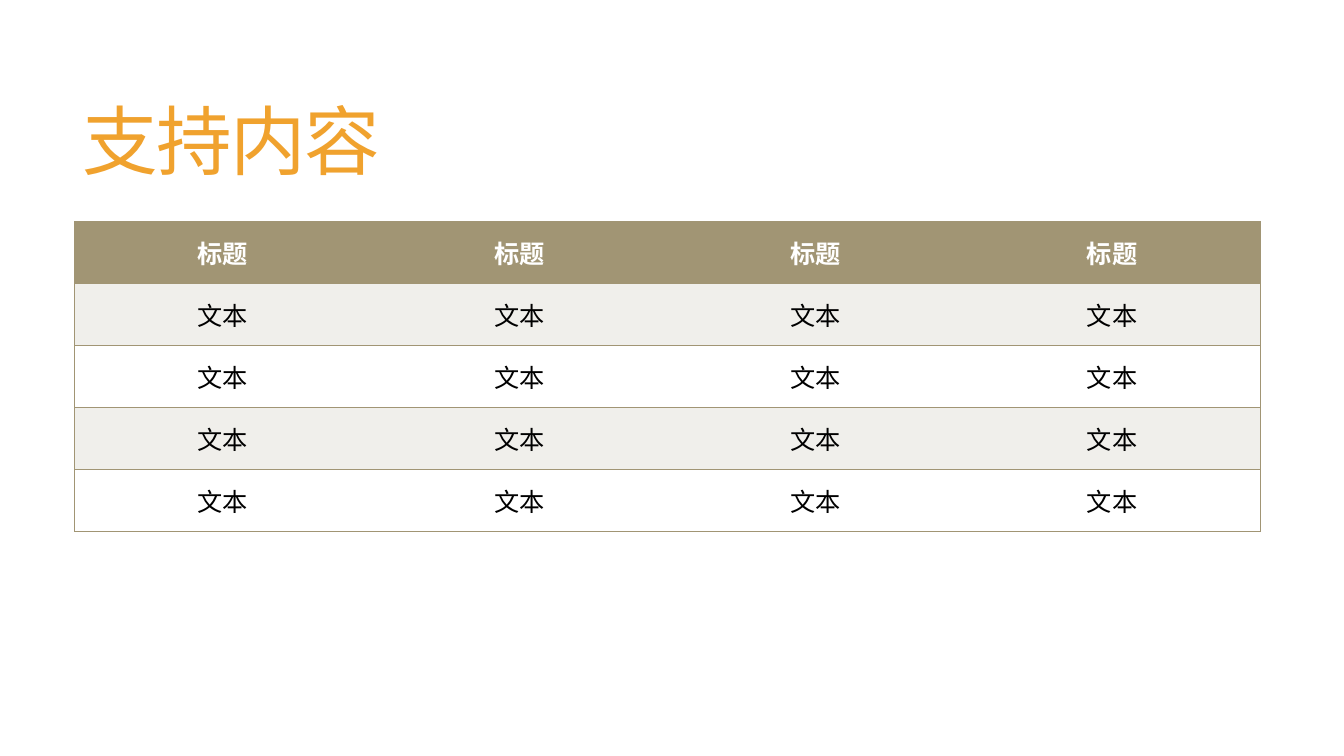
from lxml.etree import SubElement
from pptx import Presentation
from pptx.dml.color import RGBColor
from pptx.enum.text import MSO_ANCHOR, PP_ALIGN
from pptx.oxml.ns import qn
from pptx.util import Cm, Pt

THEME = {
    "font": "Noto Sans CJK SC",
    "title": RGBColor.from_string("F0A22E"),
    "accent": RGBColor.from_string("A19574"),
    "band": RGBColor.from_string("F0EFEB"),
    "white": RGBColor.from_string("FFFFFF"),
    "black": RGBColor.from_string("000000"),
    "title_size": Pt(54),
    "cell_size": Pt(18),
    "border": Pt(1),
}
ROWS = [["标题"] * 4] + [["文本"] * 4 for _ in range(4)]
COL_WIDTH, ROW_HEIGHT = Cm(7.47), Cm(1.56)


def style_run(r, size, color, bold=False):
    r.font.size, r.font.bold, r.font.name = size, bold, THEME["font"]
    r.font.color.rgb = color
    SubElement(r.font._element, qn("a:ea"), typeface=THEME["font"])


def set_border(cell, side, visible):
    ln = SubElement(cell._tc.get_or_add_tcPr(), qn(f"a:ln{side}"), w=str(int(THEME["border"])))
    if visible:
        fill = SubElement(ln, qn("a:solidFill"))
        SubElement(fill, qn("a:srgbClr"), val=str(THEME["accent"]))
    else:
        SubElement(ln, qn("a:noFill"))


prs = Presentation()
prs.slide_width, prs.slide_height = Cm(33.87), Cm(19.05)
s = prs.slides.add_slide(prs.slide_layouts[6])

title = s.shapes.add_textbox(Cm(1.83), Cm(1.4), Cm(29.92), Cm(4.6))
tf = title.text_frame
tf.word_wrap = True
tf.vertical_anchor = MSO_ANCHOR.MIDDLE
tf.text = "支持内容"
p = tf.paragraphs[0]
p.line_spacing = 0.85
r = p.runs[0]
style_run(r, THEME["title_size"], THEME["title"])
r.font._element.set("spc", "-120")

n_rows, n_cols = len(ROWS), len(ROWS[0])
table = s.shapes.add_table(
    n_rows, n_cols, Cm(1.88), Cm(5.59), COL_WIDTH * n_cols, ROW_HEIGHT * n_rows
).table
for col in table.columns:
    col.width = COL_WIDTH
for row in table.rows:
    row.height = ROW_HEIGHT

for i, texts in enumerate(ROWS):
    header = i == 0
    fill = THEME["accent"] if header else THEME["band"] if i % 2 else THEME["white"]
    for j, text in enumerate(texts):
        cell = table.cell(i, j)
        cell.vertical_anchor = MSO_ANCHOR.MIDDLE
        set_border(cell, "L", j == 0)
        set_border(cell, "R", j == n_cols - 1)
        set_border(cell, "T", True)
        set_border(cell, "B", True)
        cell.fill.solid()
        cell.fill.fore_color.rgb = fill
        p = cell.text_frame.paragraphs[0]
        p.text = text
        p.alignment = PP_ALIGN.CENTER
        style_run(p.runs[0], THEME["cell_size"], THEME["white"] if header else THEME["black"], header)

prs.save("out.pptx")
